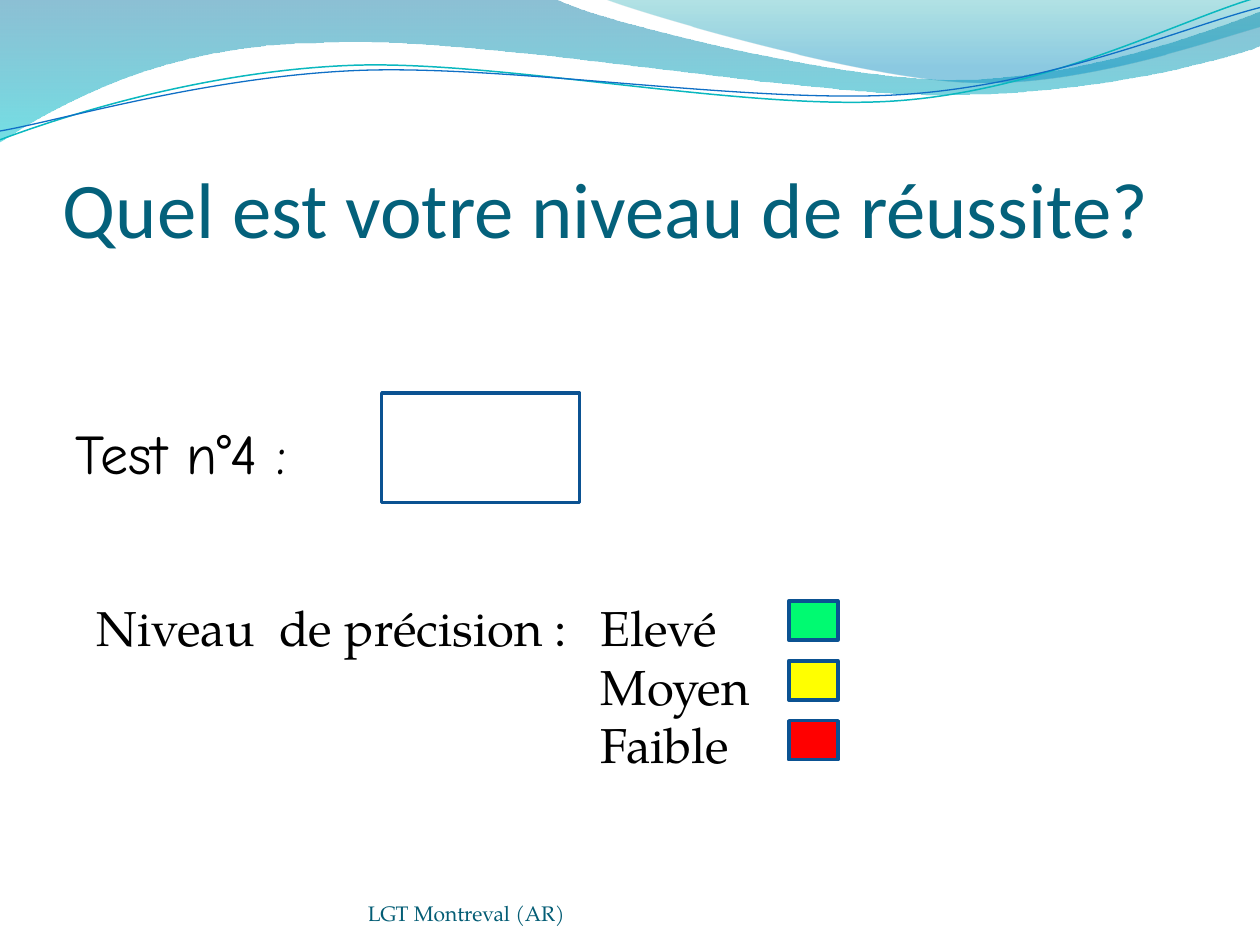
from lxml.etree import SubElement
from pptx import Presentation
from pptx.dml.color import RGBColor
from pptx.enum.shapes import MSO_SHAPE
from pptx.enum.text import MSO_ANCHOR
from pptx.oxml.ns import qn
from pptx.util import Inches, Pt

COLORS = {
    "title": "04617B", "text": "000000", "footer": "045D75",
    "border": "0B5292", "white": "FFFFFF",
    "high": "00FA71", "medium": "FFFF00", "low": "FF0000",
    "wave_blue": "0074A1", "wave_aqua": "00C6CF",
    "crest_teal": "00A1A9", "crest_blue": "008BBF",
    "line_teal": "0AB8BF", "line_blue": "0F6FC6",
}
SERIF = "TeX Gyre Pagella"

# Outlines in inches: a pair is a corner, six numbers are a Bezier curve
WAVE = [(0, -0.01), (4.4, -0.01),
        (4.76, 0.17, 6.64, 0.63, 7.58, 0.63),
        (8.53, 0.63, 9.58, 0.26, 10, 0.09), (10.01, 0.36),
        (9.83, 0.44, 8.7, 0.76, 7.46, 0.75),
        (6.22, 0.75, 3.82, 0.28, 2.57, 0.34),
        (1.29, 0.35, 0.46, 0.83, -0.01, 1.13)]
CREST = [(4.79, -0.01),
         (5.09, 0.11, 6.82, 0.62, 7.69, 0.65),
         (8.56, 0.69, 9.61, 0.32, 10, 0.21), (10, 0)]
TEAL_LINE = [(0, 1.11),
             (0.48, 0.93, 1.58, 0.57, 2.77, 0.52),
             (3.95, 0.47, 5.93, 0.89, 7.13, 0.8),
             (8.33, 0.71, 9.38, 0.15, 9.98, -0.02)]
BLUE_LINE = [(0, 1.04),
             (0.47, 0.96, 1.64, 0.61, 2.83, 0.56),
             (4.03, 0.51, 5.97, 0.83, 7.17, 0.75),
             (8.36, 0.67, 9.41, 0.21, 10, 0.06)]


def rgb(name):
    return RGBColor.from_string(COLORS[name])


def add_outline(s, outline, close):
    """Build the outline from its corners, then bend the curved segments."""
    corners = [(Inches(part[-2]), Inches(part[-1])) for part in outline]
    builder = s.shapes.build_freeform(*corners[0])
    builder.add_line_segments(corners[1:], close=close)
    sp = builder.convert_to_shape()
    sp.shadow.inherit = False
    segments = list(sp.element.iter(qn("a:lnTo")))
    for segment, part in zip(segments, outline[1:]):
        if len(part) == 6:
            curve = SubElement(segment.getparent(), qn("a:cubicBezTo"))
            for x, y in zip(part[::2], part[1::2]):
                SubElement(curve, qn("a:pt"), x=str(Inches(x) - sp.left),
                           y=str(Inches(y) - sp.top))
            segment.getparent().replace(segment, curve)
    return sp


def add_wave(s, outline, stops):
    """Filled wave; each stop is (position, colour, opacity in percent)."""
    sp = add_outline(s, outline, True)
    sp.line.fill.background()
    sp.fill.gradient()
    sp.fill.gradient_angle = 270
    for stop, (position, color, _) in zip(sp.fill.gradient_stops, stops):
        stop.position = position
        stop.color.rgb = rgb(color)
    for node, (_, _, opacity) in zip(sp.element.iter(qn("a:srgbClr")), stops):
        SubElement(node, qn("a:alpha"), val=str(opacity * 1000))


def add_curve(s, outline, color, width):
    sp = add_outline(s, outline, False)
    sp.fill.background()
    sp.line.color.rgb = rgb(color)
    sp.line.width = Pt(width)


def add_box(s, x, y, w, h, fill):
    sp = s.shapes.add_shape(MSO_SHAPE.RECTANGLE, Inches(x), Inches(y),
                            Inches(w), Inches(h))
    sp.shadow.inherit = False
    sp.fill.solid()
    sp.fill.fore_color.rgb = rgb(fill)
    sp.line.color.rgb = rgb("border")
    sp.line.width = Pt(2)


def add_text(s, x, y, w, h, lines, size, font, color,
             anchor=MSO_ANCHOR.TOP, insets=(0, 0, 0, 0), tab=None):
    tf = s.shapes.add_textbox(Inches(x), Inches(y), Inches(w), Inches(h)).text_frame
    tf.word_wrap = True
    tf.vertical_anchor = anchor
    tf.margin_left, tf.margin_top, tf.margin_right, tf.margin_bottom = map(Inches, insets)
    for i, line in enumerate(lines):
        p = tf.add_paragraph() if i else tf.paragraphs[0]
        if tab:
            tabs = SubElement(p._p.get_or_add_pPr(), qn("a:tabLst"))
            SubElement(tabs, qn("a:tab"), pos=str(Inches(tab)), algn="l")
        r = p.add_run()
        r.text = line
        r.font.size = Pt(size)
        r.font.name = font
        r.font.color.rgb = rgb(color)


def main():
    prs = Presentation()
    prs.slide_width, prs.slide_height = Inches(10), Inches(7.5)
    s = prs.slides.add_slide(prs.slide_layouts[6])

    # Wave band along the top
    add_wave(s, WAVE, [(0, "wave_blue", 45), (1, "wave_aqua", 55)])
    add_wave(s, CREST, [(0, "crest_teal", 30), (0.8, "crest_blue", 45)])
    add_curve(s, TEAL_LINE, "line_teal", 0.85)
    add_curve(s, BLUE_LINE, "line_blue", 0.75)

    # Title
    add_text(s, 0.5, 0.77, 9, 1.25, ["Quel est votre niveau de réussite?"],
             45, "Calibri", "title", MSO_ANCHOR.BOTTOM, (0, 0.05, 0, 0))

    # Test score
    add_text(s, 0.5, 2.12, 9, 4.8, ["Test n°4 :"], 32, "Comic Neue", "text",
             insets=(0.1, 1.2, 0.1, 0.05))
    add_box(s, 3.03, 3.12, 1.57, 0.87, "white")

    # Precision levels and their colour key
    add_text(s, 0.67, 4.69, 8.35, 1.52,
             ["Niveau  de précision :\tElevé", "\tMoyen", "\tFaible"],
             28, SERIF, "text", insets=(0.1, 0.05, 0.1, 0.05), tab=4)
    for i, level in enumerate(("high", "medium", "low")):
        add_box(s, 6.26, 4.77 + 0.475 * i, 0.39, 0.31, level)

    # Footer
    add_text(s, 2.92, 6.95, 3.67, 0.4, ["LGT Montreval (AR)"], 12, SERIF,
             "footer", MSO_ANCHOR.BOTTOM)

    prs.save("out.pptx")


if __name__ == "__main__":
    main()
